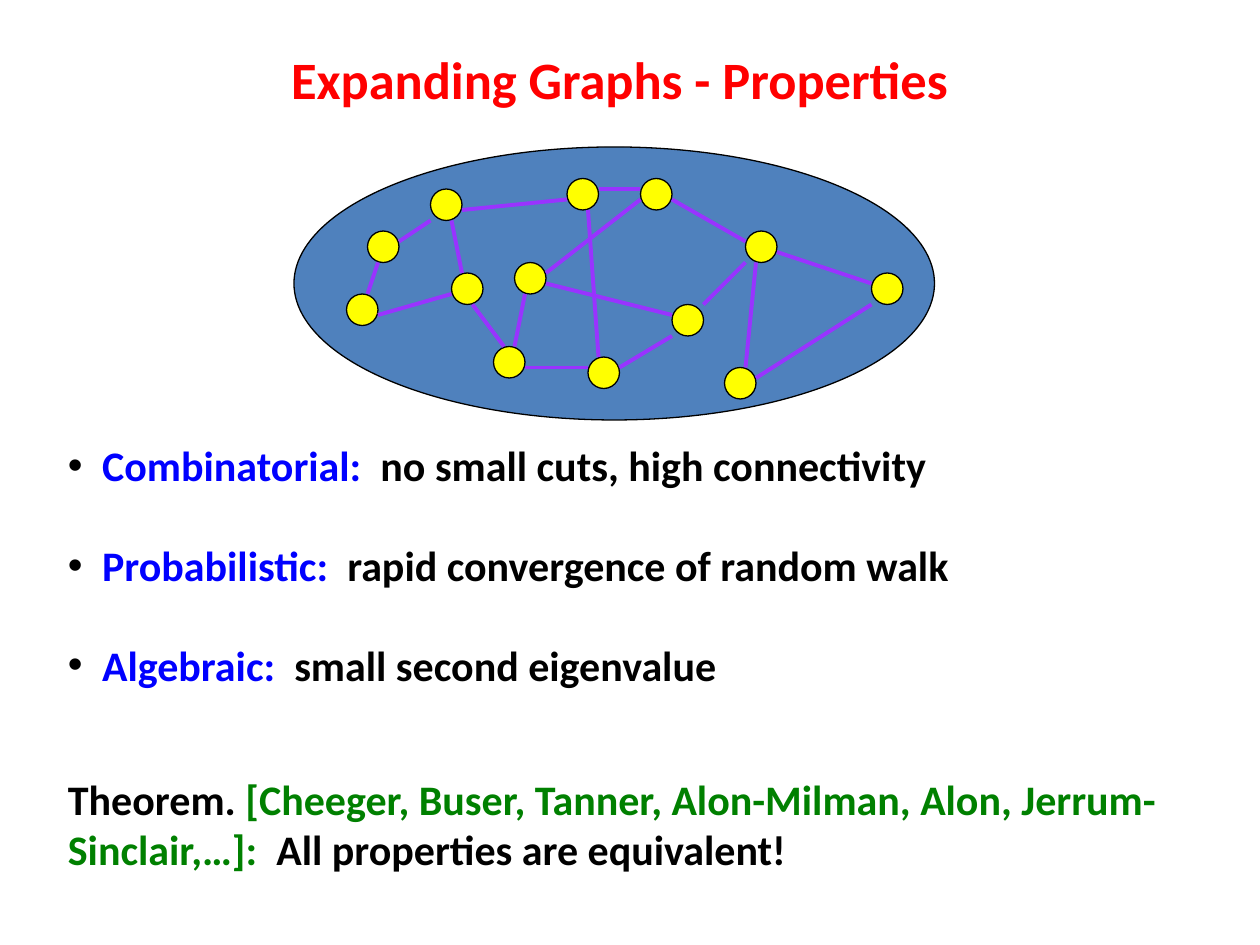
from pptx import Presentation
from pptx.dml.color import RGBColor
from pptx.enum.shapes import MSO_CONNECTOR, MSO_SHAPE
from pptx.enum.text import MSO_ANCHOR, PP_ALIGN
from pptx.oxml.ns import qn
from pptx.util import Cm, Pt
from lxml import etree

OVAL = MSO_SHAPE.OVAL
STRAIGHT = MSO_CONNECTOR.STRAIGHT
MIDDLE, TOP = MSO_ANCHOR.MIDDLE, MSO_ANCHOR.TOP
CENTER, LEFT = PP_ALIGN.CENTER, PP_ALIGN.LEFT

# Content: text as (words, colour) spans
TITLE = [("Expanding Graphs - Properties", "title")]
PROPERTIES = [
    ("Combinatorial:  ", "no small cuts, high connectivity"),
    ("Probabilistic:  ", "rapid convergence of random walk"),
    ("Algebraic:  ", "small second eigenvalue"),
]
THEOREM = [
    ("Theorem. ", "text"),
    ("[Cheeger, Buser, Tanner, Alon-Milman, Alon, Jerrum-Sinclair,…]:  ", "citation"),
    ("All properties are equivalent!", "text"),
]

# Graph on a grid of twelfths of an inch
GRID_CM = 2.54 / 12
REGION = (28, 14, 61, 26)  # left, top, width, height
VERTEX_SIZE = 3
VERTICES = [  # left, top
    (35, 22), (41, 18), (43, 26), (33, 28), (47, 33), (49, 25), (56, 34),
    (64, 29), (69, 35), (54, 17), (83, 26), (61, 17), (71, 22),
]
EDGES = [  # start x, start y, end x, end y
    (36, 25, 35, 28), (38, 23, 41, 21), (36, 30, 43, 28),
    (45, 29, 48, 33), (44, 26, 43, 21), (44, 20, 54, 19),
    (50, 28, 49, 33), (56, 20, 57, 34), (50, 35, 56, 35),
    (52, 27, 64, 30), (52, 26, 61, 19), (57, 18, 61, 18),
    (59, 35, 64, 32), (71, 25, 67, 29), (72, 25, 71, 35),
    (64, 19, 71, 23), (74, 24, 83, 27), (72, 36, 83, 29),
]

THEME = {
    "font": "Calibri", "title_size": 30, "body_size": 24,
    "outline_width": 0.75, "edge_width": 2.25,
    "title": "FF0000", "label": "0000FF", "text": "000000",
    "citation": "008000", "region": "4F81BD", "vertex": "FFFF00",
    "outline": "000000", "edge": "9933FF",
}


def color(role):
    return RGBColor.from_string(THEME[role])


def grid(*values):
    return [Cm(value * GRID_CM) for value in values]


def add_text(page, frame, spans, size="body_size", align=LEFT, anchor=TOP):
    box = page.shapes.add_textbox(*[Cm(value) for value in frame])
    box.text_frame.word_wrap = True
    box.text_frame.vertical_anchor = anchor
    para = box.text_frame.paragraphs[0]
    para.alignment = align
    for words, role in spans:
        span = para.add_run()
        span.text = words
        span.font.name = THEME["font"]
        span.font.size = Pt(THEME[size])
        span.font.bold = True
        span.font.color.rgb = color(role)
    return para


def add_bullet(para, indent):
    properties = para._p.get_or_add_pPr()
    properties.set("marL", str(indent))
    properties.set("indent", str(-indent))
    tint = etree.SubElement(properties, qn("a:buClr"))
    etree.SubElement(tint, qn("a:srgbClr"), val=THEME["text"])
    etree.SubElement(properties, qn("a:buFont"), typeface="Arial")
    etree.SubElement(properties, qn("a:buChar"), char="•")


def add_oval(graph, frame, role):
    oval = graph.shapes.add_shape(OVAL, *grid(*frame))
    oval.shadow.inherit = False
    oval.fill.solid()
    oval.fill.fore_color.rgb = color(role)
    oval.line.color.rgb = color("outline")
    oval.line.width = Pt(THEME["outline_width"])


def add_edge(graph, ends):
    edge = graph.shapes.add_connector(STRAIGHT, *grid(*ends))
    edge.line.color.rgb = color("edge")
    edge.line.width = Pt(THEME["edge_width"])
    etree.SubElement(edge._element.spPr, qn("a:effectLst"))


def main():
    deck = Presentation()
    deck.slide_width, deck.slide_height = Cm(25.4), Cm(19.05)
    page = deck.slides.add_slide(deck.slide_layouts[6])

    # Title
    add_text(page, (1.7, 0, 21.59, 3.18), TITLE, "title_size", CENTER, MIDDLE)

    # Properties at an even pitch
    for row, (label, meaning) in enumerate(PROPERTIES):
        frame = (1.12, 8.74 + row * 2.01, 22.86, 1.27)
        para = add_text(page, frame, [(label, "label"), (meaning, "text")])
        add_bullet(para, Cm(0.69))

    # Theorem
    add_text(page, (1.12, 15.47, 24.28, 2.31), THEOREM)

    # Graph: region, vertices, edges
    graph = page.shapes.add_group_shape()
    add_oval(graph, REGION, "region")
    for left, top in VERTICES:
        add_oval(graph, (left, top, VERTEX_SIZE, VERTEX_SIZE), "vertex")
    for ends in EDGES:
        add_edge(graph, ends)

    deck.save("out.pptx")


if __name__ == "__main__":
    main()
